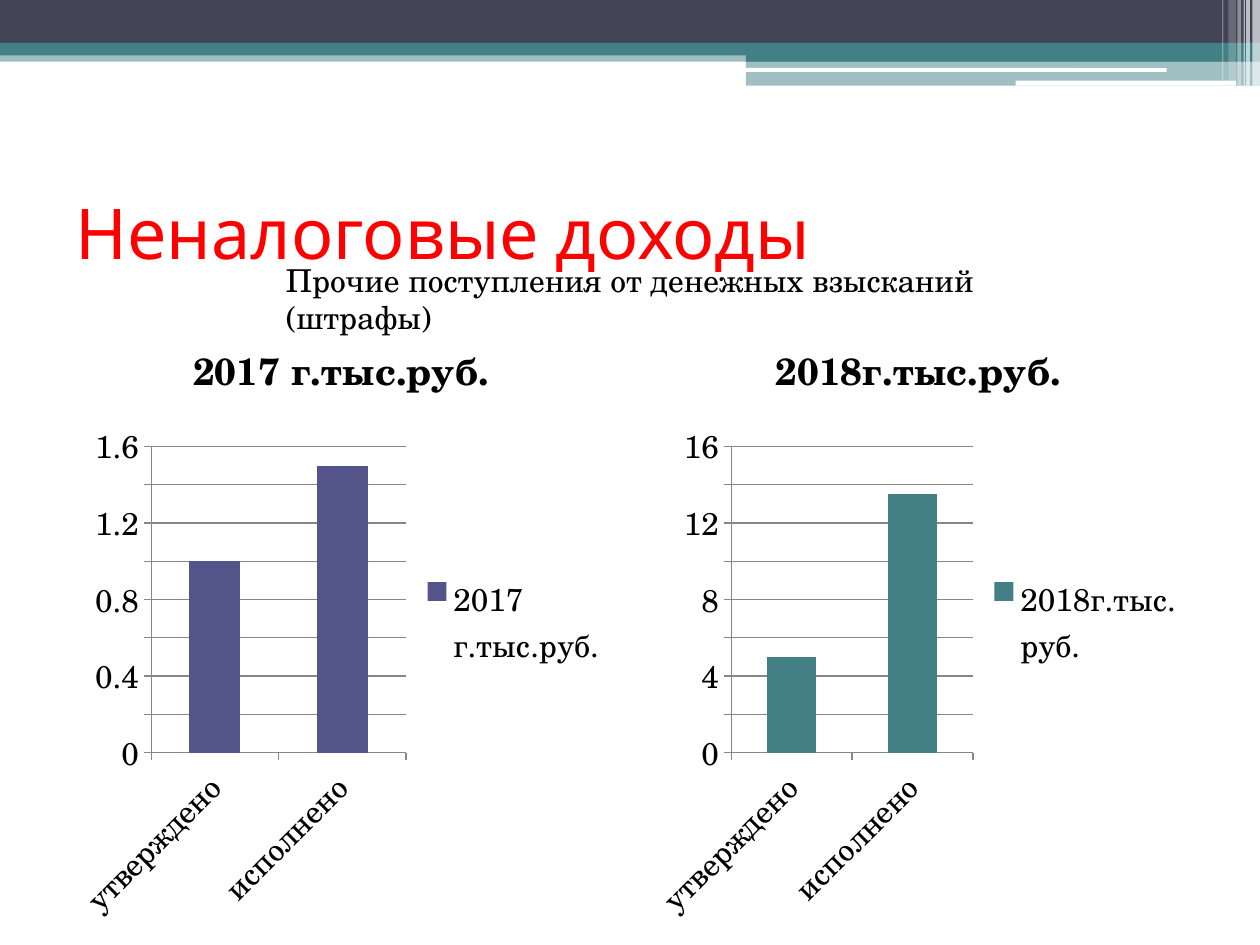
import lxml.etree
import pptx
import pptx.chart.data
import pptx.dml.color
import pptx.enum.chart
import pptx.enum.shapes
import pptx.enum.text
import pptx.oxml.ns
import pptx.util

Inches = pptx.util.Inches
Pt = pptx.util.Pt
RGBColor = pptx.dml.color.RGBColor
SHAPE = pptx.enum.shapes.MSO_SHAPE

NAVY = RGBColor(0x42, 0x44, 0x56)
TEAL = RGBColor(0x43, 0x80, 0x86)
INDIGO = RGBColor(0x53, 0x54, 0x8A)
WHITE = RGBColor(0xFF, 0xFF, 0xFF)
BLACK = RGBColor(0, 0, 0)
RED = RGBColor(0xFF, 0, 0)
GRAY = RGBColor(0x87, 0x87, 0x87)
HEADING_FONT = "Karla"
BODY_FONT = "TeX Gyre Schola"


def format_font(font, size=18, name=BODY_FONT, color=BLACK, bold=False):
    font.size = Pt(size)
    font.name = name
    font.color.rgb = color
    font.bold = bold


def write_text(frame, text, anchor=pptx.enum.text.MSO_ANCHOR.TOP,
               align=pptx.enum.text.PP_ALIGN.LEFT, **font_format):
    frame.word_wrap = True
    frame.vertical_anchor = anchor
    paragraph = frame.paragraphs[0]
    paragraph.alignment = align
    run = paragraph.add_run()
    run.text = text
    format_font(run.font, **font_format)


def add_band(slide, left, top, width, height, color, opacity=100,
             kind=SHAPE.RECTANGLE):
    band = slide.shapes.add_shape(
        kind, Inches(left), Inches(top), Inches(width), Inches(height))
    band.shadow.inherit = False
    band.line.fill.background()
    band.fill.solid()
    band.fill.fore_color.rgb = color
    if opacity < 100:
        rgb = band.fill._xPr.find(".//" + pptx.oxml.ns.qn("a:srgbClr"))
        lxml.etree.SubElement(rgb, pptx.oxml.ns.qn("a:alpha"),
                              val=str(opacity * 1000))


def add_header(slide, left, top, width):
    right = left + width
    step = left + 5.92
    add_band(slide, left, top + 0.4, width, 0.09, TEAL, 50)
    add_band(slide, left, top, width, 0.34, NAVY)
    add_band(slide, left, top + 0.34, width, 0.1, TEAL)
    add_band(slide, step, top + 0.39, right - step, 0.1, TEAL)
    add_band(slide, step, top + 0.48, right - step, 0.2, TEAL, 50)
    for offset, drop, length, height in ((5.91, 0.54, 3.35, 0.03),
                                         (8.06, 0.64, 1.75, 0.04)):
        add_band(slide, left + offset, top + drop, length, height, WHITE,
                 kind=SHAPE.ROUNDED_RECTANGLE)
    for inset, stripe, height, opacity in (
            (0.06, 0.06, 0.68, 65), (0.11, 0.03, 0.68, 65),
            (0.13, 0.01, 0.68, 60), (0.18, 0.03, 0.68, 40),
            (0.25, 0.06, 0.64, 20), (0.3, 0.01, 0.64, 30)):
        add_band(slide, right - inset, top, stripe, height, WHITE, opacity)


def add_heading(slide, left, top, width, height):
    title = slide.shapes.title
    title.left, title.top = Inches(left), Inches(top)
    title.width, title.height = Inches(width), Inches(height)
    write_text(title.text_frame, "Неналоговые доходы", size=40,
               name=HEADING_FONT, color=RED,
               anchor=pptx.enum.text.MSO_ANCHOR.MIDDLE)


def add_subtitle(slide, left, top, width, height):
    subtitle = slide.shapes.add_textbox(
        Inches(left), Inches(top), Inches(width), Inches(height))
    write_text(subtitle.text_frame,
               "Прочие поступления от денежных взысканий (штрафы)")


def add_income_chart(slide, left, top, width, height, name, amounts, color,
                     maximum, unit):
    income = pptx.chart.data.CategoryChartData()
    income.categories = ["утверждено", "исполнено"]
    income.add_series(name, amounts)
    chart = slide.shapes.add_chart(
        pptx.enum.chart.XL_CHART_TYPE.COLUMN_CLUSTERED, Inches(left),
        Inches(top), Inches(width), Inches(height), income).chart
    format_font(chart.font)
    chart.has_title = True
    write_text(chart.chart_title.text_frame, name, size=21.6, bold=True,
               align=pptx.enum.text.PP_ALIGN.CENTER)
    chart.chart_title.include_in_layout = False
    chart.has_legend = True
    chart.legend.position = pptx.enum.chart.XL_LEGEND_POSITION.RIGHT
    chart.legend.include_in_layout = False

    columns = chart.plots[0]
    columns.gap_width = 150
    columns.vary_by_categories = False
    columns.series[0].format.fill.solid()
    columns.series[0].format.fill.fore_color.rgb = color

    amount_axis = chart.value_axis
    amount_axis.minimum_scale = 0
    amount_axis.maximum_scale = maximum
    amount_axis.major_unit = unit
    amount_axis.major_gridlines.format.line.color.rgb = GRAY
    for axis in (chart.category_axis, amount_axis):
        axis.major_tick_mark = pptx.enum.chart.XL_TICK_MARK.OUTSIDE
        axis.format.line.color.rgb = GRAY
        format_font(axis.tick_labels.font)


def main():
    presentation = pptx.Presentation()
    presentation.slide_width = Inches(10)
    presentation.slide_height = Inches(7.5)
    slide = presentation.slides.add_slide(presentation.slide_layouts[5])
    add_header(slide, 0, 0, 10)
    add_heading(slide, 0.5, 1.25, 9, 1.17)
    years = (("2017 г.тыс.руб.", (1, 1.5), INDIGO, 1.6, 0.2),
             ("2018г.тыс.руб.", (5, 13.5), TEAL, 16, 2))
    chart_width, gap = 4.42, 0.16
    for index, year in enumerate(years):
        add_income_chart(slide, 0.5 + index * (chart_width + gap), 2.46,
                         chart_width, 4.95, *year)
    add_subtitle(slide, 2.17, 2.02, 6.29, 0.4)
    presentation.save("out.pptx")


if __name__ == "__main__":
    main()
